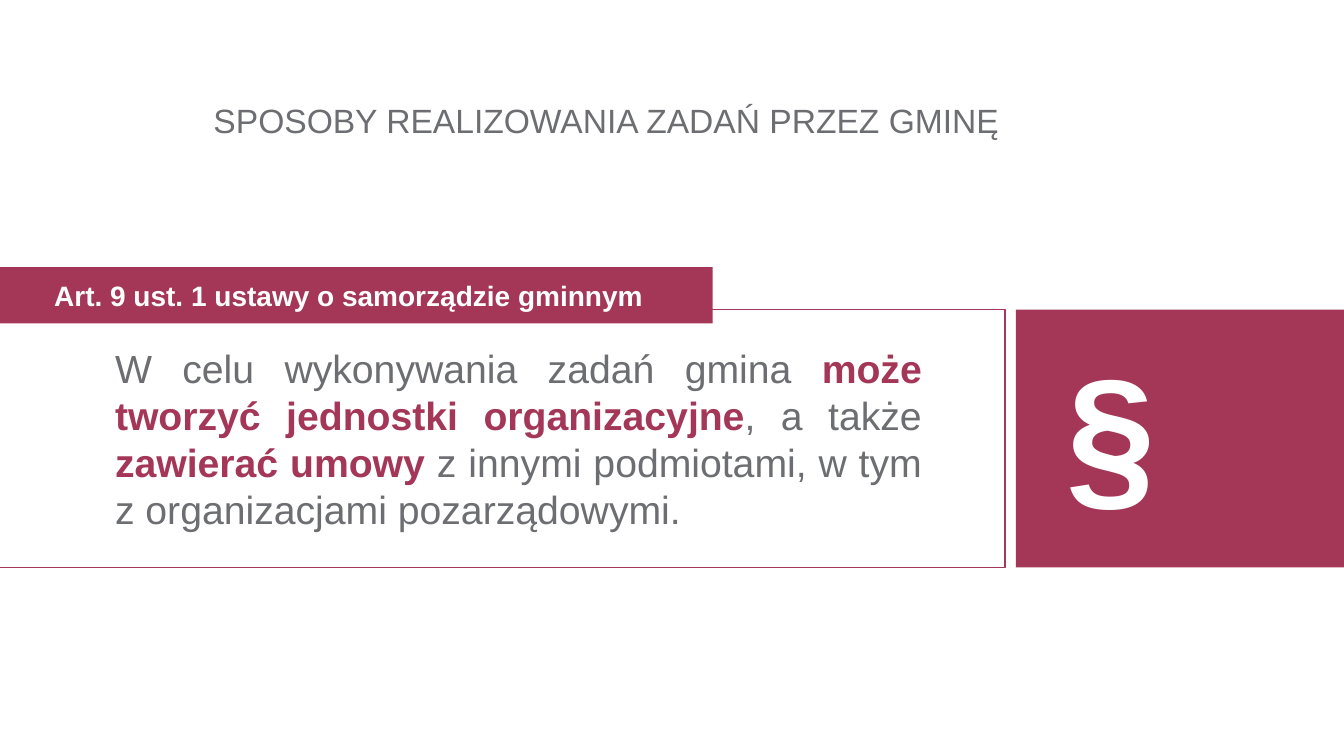
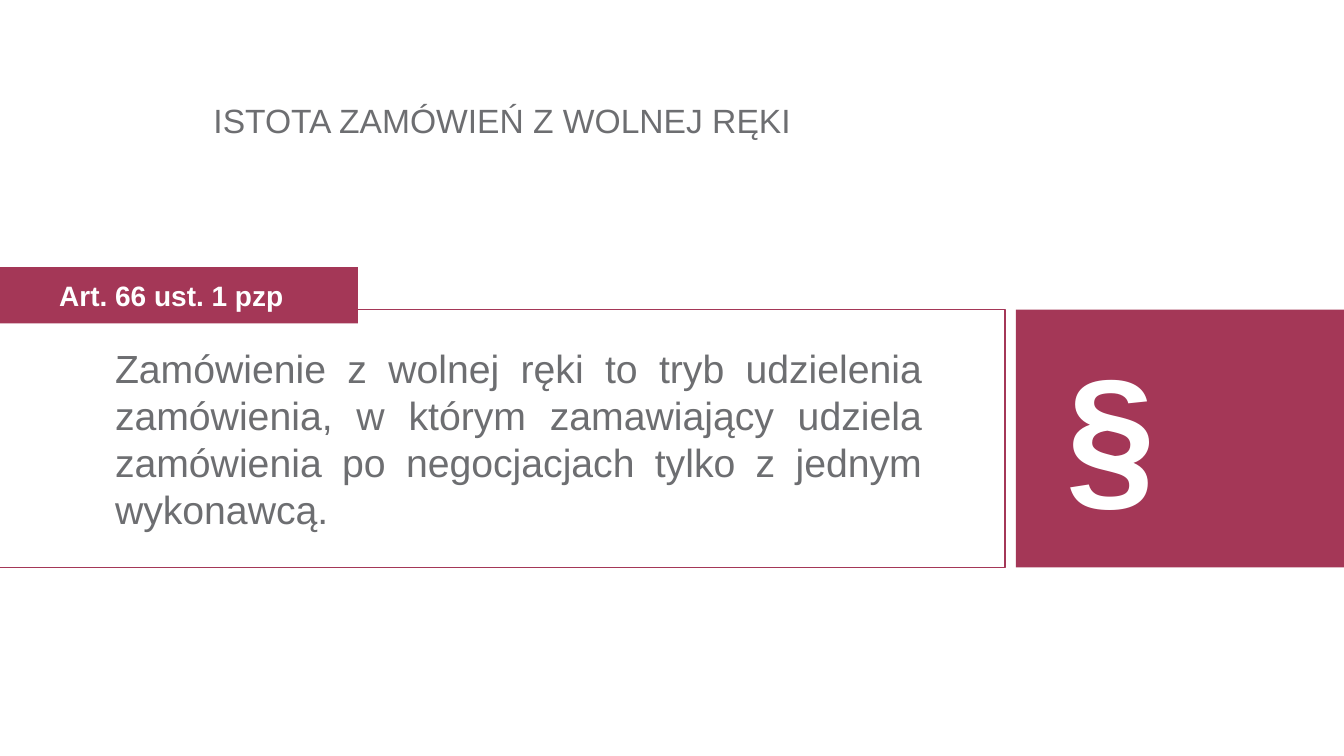
from dataclasses import dataclass

from pptx import Presentation
from pptx.dml.color import RGBColor
from pptx.enum.shapes import MSO_SHAPE
from pptx.enum.text import MSO_ANCHOR as Anchor, MSO_AUTO_SIZE, PP_ALIGN as Align
from pptx.shapes.autoshape import Shape
from pptx.slide import Slide
from pptx.util import Cm, Pt

MAROON = RGBColor(0xA4, 0x37, 0x57)
GREY = RGBColor(0x6D, 0x6E, 0x71)
WHITE = RGBColor(0xFF, 0xFF, 0xFF)
FONT = "Arial"

SLIDE_WIDTH, SLIDE_HEIGHT = 33.87, 19.05
TITLE_ONLY_LAYOUT = 5
BAND_TOP, BAND_HEIGHT = 7.8, 6.5
SIGN_LEFT = 25.6
QUOTE_LEFT, QUOTE_RIGHT = -1.14, 25.33


@dataclass(frozen=True)
class Box:
    """Position and size in centimetres."""
    left: float
    top: float
    width: float
    height: float


@dataclass(frozen=True)
class Phrase:
    text: str
    key: bool = False


@dataclass(frozen=True)
class Provision:
    title: str
    source: str
    source_width: float
    quote: tuple[Phrase, ...]


@dataclass(frozen=True)
class TextStyle:
    size: float
    color: RGBColor
    bold: bool = False
    align: Align = Align.LEFT
    anchor: Anchor = Anchor.MIDDLE
    insets: tuple[float, float, float, float] = (0.25, 0.13, 0.25, 0.13)
    indent: float = 0


TITLE_BOX = Box(5.13, 2.13, 24.54, 1.9)
SIGN_BOX = Box(SIGN_LEFT, BAND_TOP, SLIDE_WIDTH - SIGN_LEFT, BAND_HEIGHT)
QUOTE_BOX = Box(QUOTE_LEFT, BAND_TOP, QUOTE_RIGHT - QUOTE_LEFT, BAND_HEIGHT)

TITLE_STYLE = TextStyle(24, GREY)
SIGN_STYLE = TextStyle(115, WHITE, bold=True, anchor=Anchor.BOTTOM,
                       insets=(0, 0, 1.8, 1.09), indent=1.27)
QUOTE_STYLE = TextStyle(28, GREY, align=Align.JUSTIFY,
                        insets=(1.5, 0.13, 2.1, 0.13), indent=2.54)
SOURCE_STYLE = TextStyle(20, WHITE, bold=True, align=Align.CENTER,
                         insets=(1, 0.13, 1, 0.13))

PROVISIONS = (
    Provision(
        "SPOSOBY REALIZOWANIA ZADAŃ PRZEZ GMINĘ",
        "Art. 9 ust. 1 ustawy o samorządzie gminnym", 18.34,
        (Phrase("W celu wykonywania zadań gmina "),
         Phrase("może tworzyć jednostki organizacyjne", key=True),
         Phrase(", a także "),
         Phrase("zawierać umowy ", key=True),
         Phrase("z innymi podmiotami, w tym z organizacjami pozarządowymi.")),
    ),
    Provision(
        "ISTOTA ZAMÓWIEŃ Z WOLNEJ RĘKI",
        "Art. 66 ust. 1 pzp", 9.4,
        (Phrase("Zamówienie z wolnej ręki to tryb udzielenia zamówienia, "
                "w którym zamawiający udziela zamówienia po negocjacjach "
                "tylko z jednym wykonawcą."),),
    ),
)


def write(shape: Shape, phrases: tuple[Phrase, ...], style: TextStyle) -> None:
    """Fill the shape with one paragraph, its key phrases bold and maroon."""
    frame = shape.text_frame
    frame.word_wrap = True
    frame.auto_size = MSO_AUTO_SIZE.NONE
    frame.vertical_anchor = style.anchor
    (frame.margin_left, frame.margin_top,
     frame.margin_right, frame.margin_bottom) = map(Cm, style.insets)
    paragraph = frame.paragraphs[0]
    paragraph.alignment = style.align
    if style.indent:
        paragraph._p.get_or_add_pPr().set("marL", str(Cm(style.indent)))
    for phrase in phrases:
        run = paragraph.add_run()
        run.text = phrase.text
        run.font.name = FONT
        run.font.size = Pt(style.size)
        run.font.bold = style.bold or phrase.key
        run.font.color.rgb = MAROON if phrase.key else style.color


def place(shape: Shape, box: Box) -> None:
    shape.left, shape.top = Cm(box.left), Cm(box.top)
    shape.width, shape.height = Cm(box.width), Cm(box.height)


def add_panel(slide: Slide, box: Box, fill: RGBColor, outlined: bool = False) -> Shape:
    panel = slide.shapes.add_shape(
        MSO_SHAPE.RECTANGLE, Cm(box.left), Cm(box.top), Cm(box.width), Cm(box.height))
    panel.shadow.inherit = False
    panel.fill.solid()
    panel.fill.fore_color.rgb = fill
    if outlined:
        panel.line.color.rgb = MAROON
        panel.line.width = Pt(1)
    else:
        panel.line.fill.background()
    return panel


def add_title(slide: Slide, text: str) -> None:
    title = slide.shapes.title
    place(title, TITLE_BOX)
    write(title, (Phrase(text),), TITLE_STYLE)
    title.text_frame.paragraphs[0].line_spacing = 0.9


def add_provision_slide(deck: Presentation, provision: Provision) -> None:
    slide = deck.slides.add_slide(deck.slide_layouts[TITLE_ONLY_LAYOUT])
    add_title(slide, provision.title)
    write(add_panel(slide, SIGN_BOX, MAROON), (Phrase("§"),), SIGN_STYLE)
    write(add_panel(slide, QUOTE_BOX, WHITE, outlined=True), provision.quote, QUOTE_STYLE)
    source_box = Box(-0.38, 6.73, provision.source_width, 1.42)
    write(add_panel(slide, source_box, MAROON), (Phrase(provision.source),), SOURCE_STYLE)


def main() -> None:
    deck = Presentation()
    deck.slide_width, deck.slide_height = Cm(SLIDE_WIDTH), Cm(SLIDE_HEIGHT)
    for provision in PROVISIONS:
        add_provision_slide(deck, provision)
    deck.save("out.pptx")


if __name__ == "__main__":
    main()
